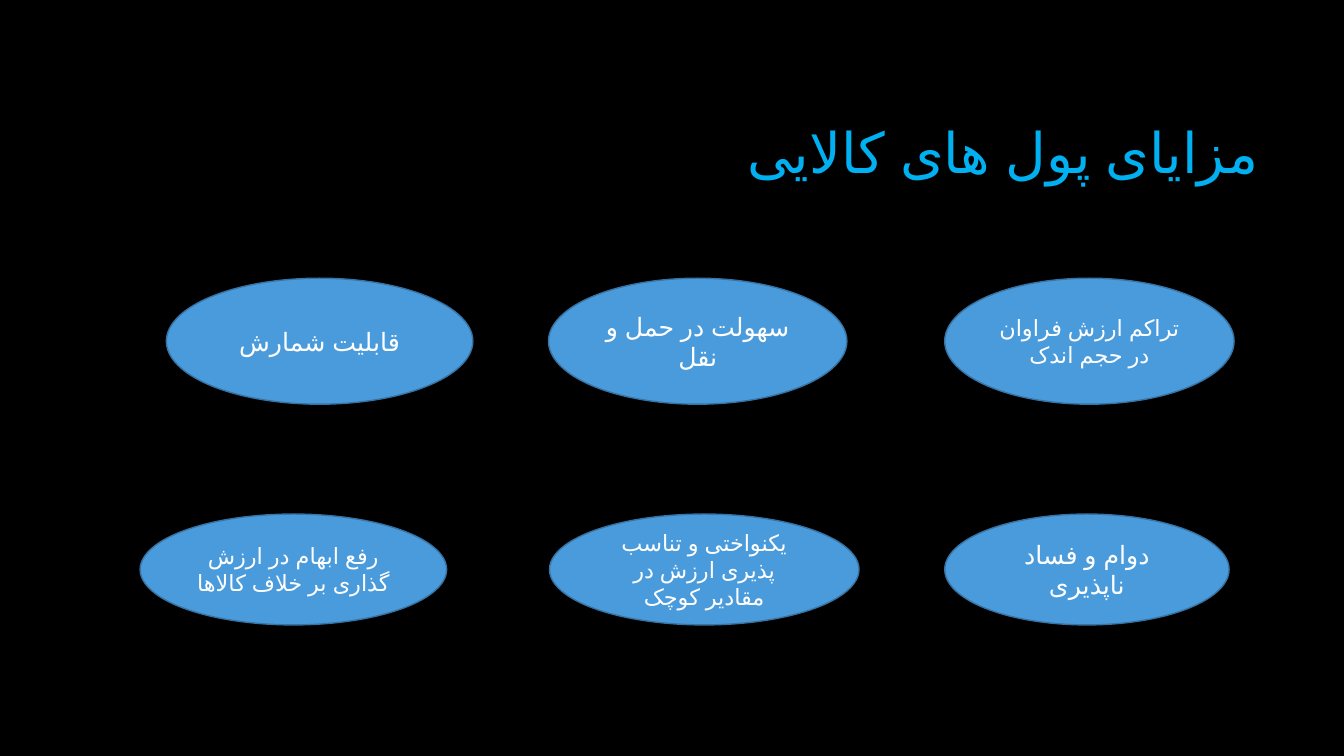
from lxml.etree import SubElement
from pptx import Presentation
from pptx.dml.color import RGBColor
from pptx.enum.shapes import MSO_SHAPE as SHAPE
from pptx.enum.text import MSO_ANCHOR as ANCHOR, MSO_AUTO_SIZE as AUTO_SIZE, PP_ALIGN as ALIGN
from pptx.oxml.ns import qn
from pptx.util import Inches, Pt

BLACK = RGBColor(0x00, 0x00, 0x00)
WHITE = RGBColor(0xFF, 0xFF, 0xFF)
CYAN = RGBColor(0x00, 0xB0, 0xF0)
BLUE = RGBColor(0x4A, 0x9B, 0xDC)
DARK_BLUE = RGBColor(0x37, 0x73, 0xA3)
FONT = "Quicksand"

# Each row: top, height, then ellipses as (left, width, font size, text)
ROWS = [
    (2.76, 1.25, [
        (9.37, 2.87, 16, "تراکم ارزش فراوان در حجم اندک"),
        (5.44, 2.96, 18, "سهولت در حمل و نقل"),
        (1.65, 3.04, 18, "قابلیت شمارش"),
    ]),
    (5.1, 1.1, [
        (9.37, 2.82, 18, "دوام و فساد ناپذیری"),
        (5.45, 3.07, 16, "یکنواختی و تناسب پذیری ارزش در مقادیر کوچک"),
        (1.39, 3.04, 16, "رفع ابهام در ارزش گذاری بر خلاف کالاها"),
    ]),
]


def write_rtl(sp, text, size, color, align):
    """Fill a shape with one right-to-left paragraph, centred vertically."""
    tf = sp.text_frame
    tf.word_wrap = True
    tf.auto_size = AUTO_SIZE.NONE
    tf.vertical_anchor = ANCHOR.MIDDLE
    p = tf.paragraphs[0]
    p.alignment = align
    p._p.get_or_add_pPr().set("rtl", "1")
    r = p.add_run()
    r.text = text
    r.font.size = Pt(size)
    r.font.name = FONT
    r.font.color.rgb = color
    rPr = r._r.get_or_add_rPr()
    rPr.set("lang", "fa-IR")
    SubElement(rPr, qn("a:cs"), typeface=FONT)
    return p


def set_title(s, text):
    sp = s.shapes.title
    sp.left, sp.top, sp.width, sp.height = map(Inches, (3.17, 0.84, 9.42, 1.41))
    p = write_rtl(sp, text, 40, CYAN, ALIGN.RIGHT)
    p.line_spacing = 0.9


def add_ellipse(s, left, top, width, height, size, text):
    sp = s.shapes.add_shape(SHAPE.OVAL, *map(Inches, (left, top, width, height)))
    sp.shadow.inherit = False
    sp.fill.solid()
    sp.fill.fore_color.rgb = BLUE
    sp.line.color.rgb = DARK_BLUE
    sp.line.width = Pt(1)
    write_rtl(sp, text, size, WHITE, ALIGN.CENTER)


def main():
    prs = Presentation()
    prs.slide_width, prs.slide_height = Inches(13.33), Inches(7.5)
    s = prs.slides.add_slide(prs.slide_layouts.get_by_name("Title Only"))
    s.background.fill.solid()
    s.background.fill.fore_color.rgb = BLACK

    set_title(s, "مزایای پول های کالایی")
    for top, height, ellipses in ROWS:
        for left, width, size, text in ellipses:
            add_ellipse(s, left, top, width, height, size, text)
    prs.save("out.pptx")


if __name__ == "__main__":
    main()
